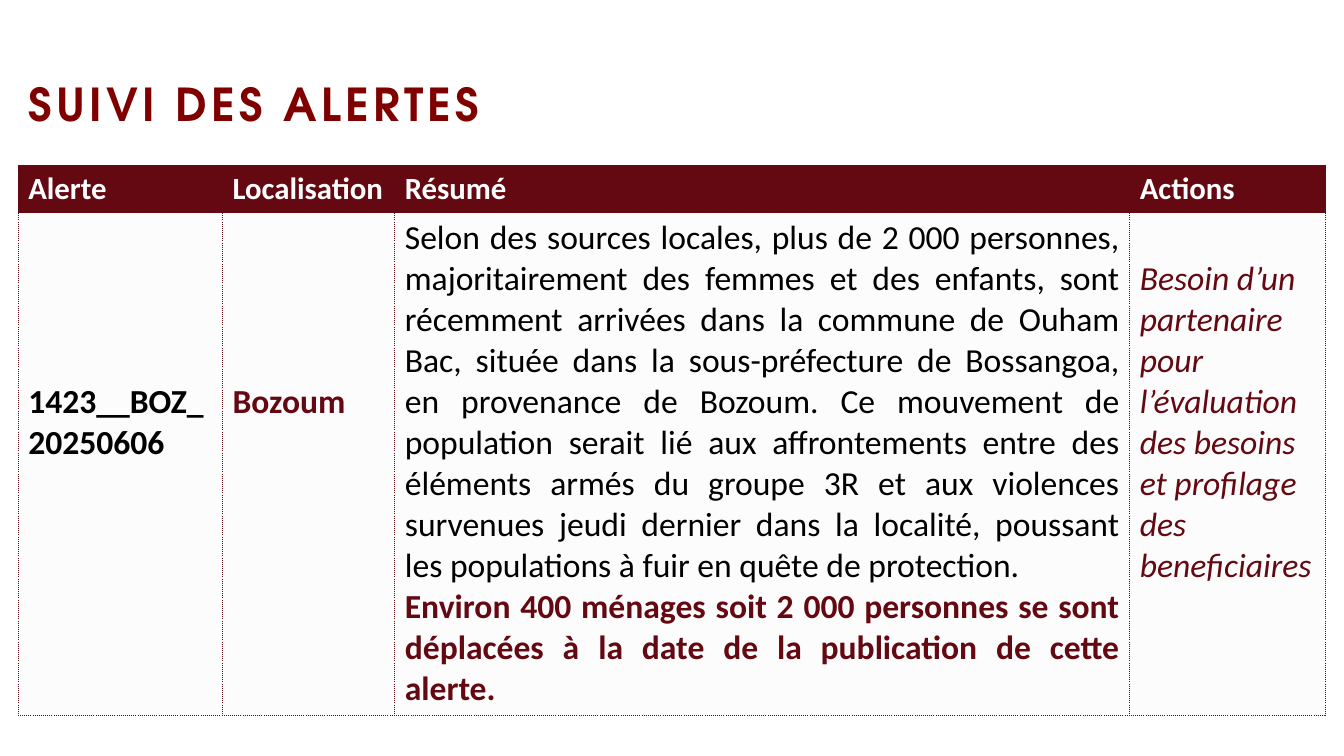
import pptx
import pptx.dml.color
import pptx.enum.text
import pptx.oxml
import pptx.oxml.ns
import pptx.util
from pptx.util import Pt

RGBColor = pptx.dml.color.RGBColor
PP_ALIGN = pptx.enum.text.PP_ALIGN

TITLE_RED = RGBColor(0x80, 0x00, 0x00)
BURGUNDY = RGBColor(0x64, 0x08, 0x11)
PALE_GREY = RGBColor(0xE4, 0xE8, 0xE8)
BLACK = RGBColor(0x00, 0x00, 0x00)
WHITE = RGBColor(0xFF, 0xFF, 0xFF)

TITLE_FONT = "TeX Gyre Adventor"
BODY_FONT = "Calibri"
LINE_HEIGHT = 29.3
CELL_MARGIN = 3.6

COLUMN_WIDTHS = [146, 123, 525, 140]
ROW_HEIGHTS = [34, 358]
HEADERS = ["Alerte", "Localisation", "Résumé", "Actions"]
SUMMARY = (
    "Selon des sources locales, plus de 2 000 personnes, majoritairement des femmes "
    "et des enfants, sont récemment arrivées dans la commune de Ouham Bac, située dans "
    "la sous-préfecture de Bossangoa, en provenance de Bozoum. Ce mouvement de population "
    "serait lié aux affrontements entre des éléments armés du groupe 3R et aux violences "
    "survenues jeudi dernier dans la localité, poussant les populations à fuir en quête "
    "de protection."
)
DISPLACED = (
    "Environ 400 ménages soit 2 000 personnes se sont déplacées à la date de la "
    "publication de cette alerte."
)
ACTION = (
    "Besoin d’un partenaire pour l’évaluation des besoins et profilage des beneficiaires"
)


def format_run(run, font_name, size, color, bold=False, italic=False):
    run.font.name = font_name
    run.font.size = Pt(size)
    run.font.color.rgb = color
    run.font.bold = bold
    run.font.italic = italic


def add_title(slide, left, top, width, height):
    title = slide.shapes.title
    title.left, title.top, title.width, title.height = map(Pt, (left, top, width, height))
    frame = title.text_frame
    frame.text = "SUIVI DES ALERTES"
    frame.word_wrap = True
    frame.auto_size = pptx.enum.text.MSO_AUTO_SIZE.NONE
    frame.vertical_anchor = pptx.enum.text.MSO_ANCHOR.MIDDLE
    paragraph = frame.paragraphs[0]
    paragraph.alignment = PP_ALIGN.JUSTIFY
    paragraph.line_spacing = 0.9
    run = paragraph.runs[0]
    format_run(run, TITLE_FONT, 32.4, TITLE_RED, bold=True)
    run.font._element.set("spc", "300")


def add_dotted_borders(cell):
    properties = cell._tc.get_or_add_tcPr()
    for index, side in enumerate(("lnL", "lnR", "lnT", "lnB")):
        border = pptx.oxml.parse_xml(
            f'<a:{side} {pptx.oxml.ns.nsdecls("a")} w="6350">'
            f'<a:solidFill><a:srgbClr val="{BURGUNDY}"/></a:solidFill>'
            f'<a:prstDash val="sysDot"/></a:{side}>'
        )
        properties.insert(index, border)


def fill_cell(cell, color, opacity=100):
    cell.fill.solid()
    cell.fill.fore_color.rgb = color
    if opacity < 100:
        color_element = cell._tc.tcPr.find(".//" + pptx.oxml.ns.qn("a:srgbClr"))
        alpha = pptx.oxml.parse_xml(
            f'<a:alpha {pptx.oxml.ns.nsdecls("a")} val="{opacity * 1000}"/>'
        )
        color_element.append(alpha)


def write_cell(cell, lines, size, lines_above=0, alignment=PP_ALIGN.LEFT):
    """Write (text, color, bold, italic) paragraphs, lowered by some line heights."""
    cell.margin_top = Pt(CELL_MARGIN + lines_above * LINE_HEIGHT)
    cell.text_frame.text = "\n".join(line[0] for line in lines)
    for paragraph, (_, color, bold, italic) in zip(cell.text_frame.paragraphs, lines):
        paragraph.alignment = alignment
        format_run(paragraph.runs[0], BODY_FONT, size, color, bold, italic)


def add_alert_table(slide, left, top):
    frame = slide.shapes.add_table(
        len(ROW_HEIGHTS), len(COLUMN_WIDTHS), Pt(left), Pt(top),
        Pt(sum(COLUMN_WIDTHS)), Pt(sum(ROW_HEIGHTS)),
    )
    table = frame.table
    table.horz_banding = False
    for column, width in zip(table.columns, COLUMN_WIDTHS):
        column.width = Pt(width)
    for row, height in zip(table.rows, ROW_HEIGHTS):
        row.height = Pt(height)

    for column, header in enumerate(HEADERS):
        cell = table.cell(0, column)
        fill_cell(cell, BURGUNDY)
        write_cell(cell, [(header, WHITE, True, False)], 22)

    alert = [
        ([("1423__BOZ_20250606", BLACK, True, False)], 4, PP_ALIGN.LEFT),
        ([("Bozoum", BURGUNDY, True, False)], 4, PP_ALIGN.LEFT),
        (
            [(SUMMARY, BLACK, False, False), (DISPLACED, BURGUNDY, True, False)],
            0,
            PP_ALIGN.JUSTIFY,
        ),
        ([(ACTION, BURGUNDY, False, True)], 1, PP_ALIGN.LEFT),
    ]
    for column, (lines, lines_above, alignment) in enumerate(alert):
        cell = table.cell(1, column)
        fill_cell(cell, PALE_GREY, opacity=10)
        write_cell(cell, lines, 24, lines_above, alignment)

    for cell in table.iter_cells():
        add_dotted_borders(cell)


def main():
    presentation = pptx.Presentation()
    presentation.slide_width = Pt(960)
    presentation.slide_height = Pt(540)
    slide = presentation.slides.add_slide(presentation.slide_layouts[5])
    add_title(slide, 13, 50.4, 358.6, 51.8)
    add_alert_table(slide, 13, 118)
    presentation.save("out.pptx")


if __name__ == "__main__":
    main()
